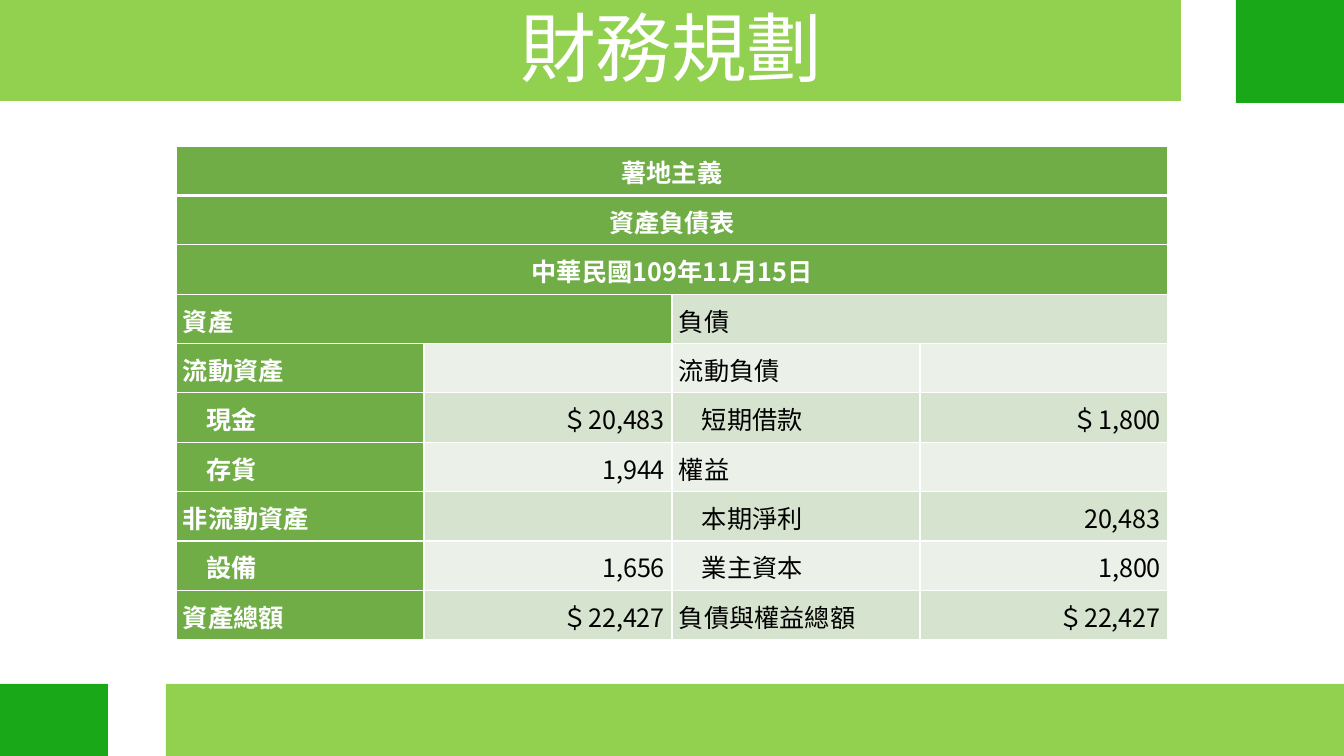
"""Build the financial planning slide with its balance sheet."""
import pptx
import pptx.dml.color
import pptx.enum.shapes
import pptx.enum.text
import pptx.oxml
import pptx.oxml.ns
import pptx.util

PX = 914400 / 100.8
FONT = "Noto Sans CJK SC"
COLORS = {
    "white": "FFFFFF", "black": "000000", "lime": "92D050", "green": "18A818",
    "header": "70AD47", "dark band": "D5E3CF", "light band": "EBF1E9",
}
ALIGN = pptx.enum.text.PP_ALIGN
MIDDLE = pptx.enum.text.MSO_ANCHOR.MIDDLE


def px(*lengths):
    return [round(length * PX) for length in lengths]


def write(frame, text, *, size=18, color="black", bold=False, align=ALIGN.JUSTIFY,
          spacing=1.07, indent=0):
    para = frame.paragraphs[0]
    para.alignment = align
    para.line_spacing = spacing
    if indent:
        para._p.get_or_add_pPr().set("marL", str(px(indent)[0]))
    span = para.add_run()
    span.text = text
    span.font.size = pptx.util.Pt(size)
    span.font.bold = bold
    span.font.name = FONT
    span.font.color.rgb = pptx.dml.color.RGBColor.from_string(COLORS[color])
    east_asian = pptx.oxml.parse_xml(
        f'<a:ea {pptx.oxml.ns.nsdecls("a")} typeface="{FONT}"/>')
    span.font._element.find(pptx.oxml.ns.qn("a:latin")).addnext(east_asian)


deck = pptx.Presentation()
deck.slide_width, deck.slide_height = px(1344, 756)
page = deck.slides.add_slide(deck.slide_layouts[5])

HEADINGS = ["薯地主義", "資產負債表", "中華民國109年11月15日"]
ACCOUNTS = [
    ["資產", "", "負債", ""],
    ["流動資產", "", "流動負債", ""],
    ["現金", "＄20,483", "短期借款", "＄1,800"],
    ["存貨", "1,944", "權益", ""],
    ["非流動資產", "", "本期淨利", "20,483"],
    ["設備", "1,656", "業主資本", "1,800"],
    ["資產總額", "＄22,427", "負債與權益總額", "＄22,427"],
]
INDENTED = {"現金", "存貨", "設備", "短期借款", "本期淨利", "業主資本"}
rows = [[heading, "", "", ""] for heading in HEADINGS] + ACCOUNTS

sheet = page.shapes.add_table(len(rows), 4, *px(176, 146, 992, 494)).table
for row, texts in enumerate(rows):
    is_heading = row < len(HEADINGS)
    for column, text in enumerate(texts):
        cell = sheet.cell(row, column)
        cell.vertical_anchor = MIDDLE
        cell.margin_left, cell.margin_right, cell.margin_top, cell.margin_bottom = px(7, 7, 0, 0)
        for side in "LRTB":
            thick = (row, side) in [(0, "B"), (1, "T")]
            cell._tc.get_or_add_tcPr().append(pptx.oxml.parse_xml(
                f'<a:ln{side} {pptx.oxml.ns.nsdecls("a")} w="{pptx.util.Pt(3 if thick else 1)}">'
                f'<a:solidFill><a:srgbClr val="{COLORS["white"]}"/></a:solidFill></a:ln{side}>'))
        is_header = is_heading or column == 0
        band = "dark band" if row % 2 else "light band"
        cell.fill.solid()
        cell.fill.fore_color.rgb = pptx.dml.color.RGBColor.from_string(
            COLORS["header" if is_header else band])
        if text:
            align = ALIGN.CENTER if is_heading else ALIGN.RIGHT if column % 2 else ALIGN.JUSTIFY
            write(cell.text_frame, text, color="white" if is_header else "black",
                  bold=is_header, align=align, indent=23 if text in INDENTED else 0)

for row in range(len(HEADINGS)):
    sheet.cell(row, 0).merge(sheet.cell(row, 3))
for column in (0, 2):
    sheet.cell(len(HEADINGS), column).merge(sheet.cell(len(HEADINGS), column + 1))

BARS = [
    ((0, 684, 108, 72), "green"),
    ((166, 684, 1178, 72), "lime"),
    ((0, -2, 1181, 103), "lime"),
    ((1236, 0, 108, 103), "green"),
]
for bounds, color in BARS:
    bar = page.shapes.add_shape(pptx.enum.shapes.MSO_SHAPE.RECTANGLE, *px(*bounds))
    bar.shadow.inherit = False
    bar.fill.solid()
    bar.fill.fore_color.rgb = pptx.dml.color.RGBColor.from_string(COLORS[color])
    bar.line.fill.background()

title = page.shapes.title
title.left, title.top, title.width, title.height = px(510, -2, 342, 102)
title.text_frame.auto_size = pptx.enum.text.MSO_AUTO_SIZE.NONE
title.text_frame.vertical_anchor = MIDDLE
title.text_frame.margin_top, title.text_frame.margin_bottom = px(0, 6)
write(title.text_frame, "財務規劃", size=54, color="white", align=ALIGN.LEFT, spacing=1.0)
title.element.getparent().append(title.element)

deck.save("out.pptx")
